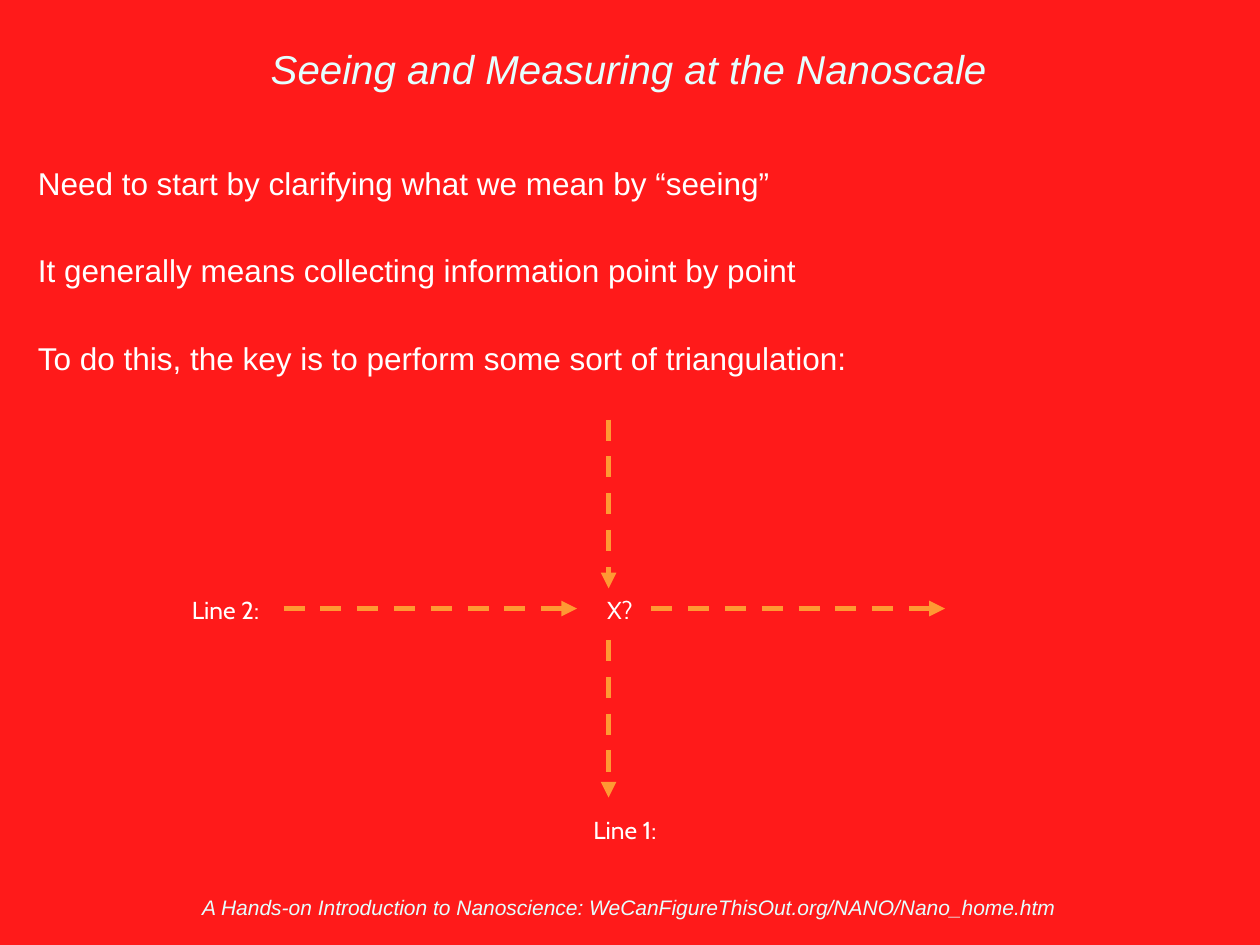
from dataclasses import dataclass

import pptx
import pptx.dml.color
import pptx.enum.dml
import pptx.enum.shapes
import pptx.enum.text
import pptx.oxml
import pptx.oxml.ns
import pptx.util
from pptx.util import Inches

COLORS = {"background": "FF1A1A", "pale": "E5FFFF", "white": "FFFFFF", "arrow": "FF9933"}
ALIGN = pptx.enum.text.PP_ALIGN
ANCHOR = pptx.enum.text.MSO_ANCHOR


@dataclass
class Style:
    size: float
    color: str
    font: str = "Arial"
    italic: bool = False
    align: ALIGN = ALIGN.CENTER
    anchor: ANCHOR = ANCHOR.TOP
    gap: float = 0  # points between paragraphs


@dataclass
class Block:
    paragraphs: list[str]
    left: float
    top: float
    width: float
    height: float
    style: Style


@dataclass
class Ray:
    x1: float
    y1: float
    x2: float
    y2: float


LABEL = Style(14, "white", font="Cabin")
TITLE = Block(["Seeing and Measuring at the Nanoscale"], 0.33, 0.08, 9.33, 0.92,
              Style(23, "pale", italic=True, anchor=ANCHOR.MIDDLE))
BLOCKS = [
    Block(["A Hands-on Introduction to Nanoscience: WeCanFigureThisOut.org/NANO/Nano_home.htm"],
          0.33, 7.06, 9.33, 0.29, Style(12, "pale", italic=True, anchor=ANCHOR.BOTTOM)),
    Block(["Need to start by clarifying what we mean by “seeing”",
           "It generally means collecting information point by point",
           "To do this, the key is to perform some sort of triangulation:"],
          0.25, 1.25, 9.58, 1.92, Style(18, "white", align=ALIGN.LEFT, gap=28.4)),
    Block(["Line 1:"], 4.42, 6.42, 1.08, 0.34, LABEL),
    Block(["Line 2:"], 1.25, 4.67, 1.08, 0.34, LABEL),
    Block(["X?"], 4.67, 4.67, 0.5, 0.34, LABEL),
]
CROSSING = 4.83  # both sight lines pass through this x and y
RAYS = [
    Ray(5.17, CROSSING, 7.5, CROSSING),
    Ray(CROSSING, 3.33, CROSSING, 4.67),
    Ray(2.25, CROSSING, 4.58, CROSSING),
    Ray(CROSSING, 5.08, CROSSING, 6.33),
]


def rgb(name: str) -> pptx.dml.color.RGBColor:
    return pptx.dml.color.RGBColor.from_string(COLORS[name])


def fill_text(sp, block: Block) -> None:
    style = block.style
    tf = sp.text_frame
    tf.word_wrap = True
    tf.auto_size = pptx.enum.text.MSO_AUTO_SIZE.NONE
    tf.vertical_anchor = style.anchor
    tf.margin_left = tf.margin_right = tf.margin_top = tf.margin_bottom = Inches(0.05)
    tf.text = "\n".join(block.paragraphs)
    for i, p in enumerate(tf.paragraphs):
        p.alignment = style.align
        p.space_before = pptx.util.Pt(style.gap if i else 0)
        for r in p.runs:
            r.font.name = style.font
            r.font.size = pptx.util.Pt(style.size)
            r.font.italic = style.italic
            r.font.color.rgb = rgb(style.color)


def add_title(s, block: Block) -> None:
    sp = s.shapes.title
    sp.left, sp.top = Inches(block.left), Inches(block.top)
    sp.width, sp.height = Inches(block.width), Inches(block.height)
    fill_text(sp, block)


def add_block(s, block: Block) -> None:
    sp = s.shapes.add_textbox(Inches(block.left), Inches(block.top),
                              Inches(block.width), Inches(block.height))
    fill_text(sp, block)


def add_ray(s, ray: Ray) -> None:
    """Draw a dashed line with an arrowhead at its far end."""
    line = s.shapes.add_connector(pptx.enum.shapes.MSO_CONNECTOR.STRAIGHT,
                                  Inches(ray.x1), Inches(ray.y1), Inches(ray.x2), Inches(ray.y2))
    line.line.color.rgb = rgb("arrow")
    line.line.width = pptx.util.Pt(3)
    line.line.dash_style = pptx.enum.dml.MSO_LINE.DASH
    nsdecls = pptx.oxml.ns.nsdecls("a")
    line.line._get_or_add_ln().append(
        pptx.oxml.parse_xml(f'<a:tailEnd {nsdecls} type="triangle"/>'))
    line._element.spPr.append(pptx.oxml.parse_xml(f"<a:effectLst {nsdecls}/>"))


def main() -> None:
    prs = pptx.Presentation()
    prs.slide_width, prs.slide_height = Inches(10), Inches(7.5)
    s = prs.slides.add_slide(prs.slide_layouts.get_by_name("Title Only"))
    s.background.fill.solid()
    s.background.fill.fore_color.rgb = rgb("background")
    add_title(s, TITLE)
    for block in BLOCKS:
        add_block(s, block)
    for ray in RAYS:
        add_ray(s, ray)
    prs.save("out.pptx")


if __name__ == "__main__":
    main()
